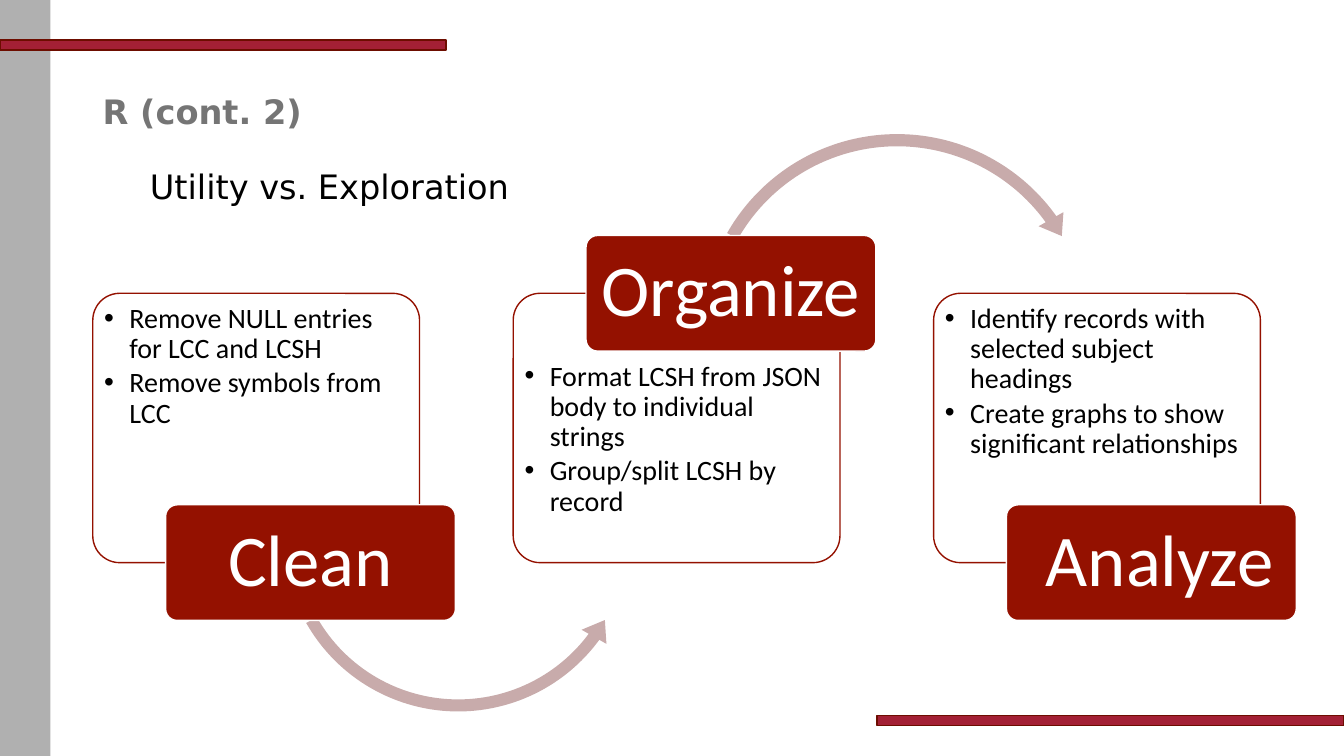
from lxml.etree import SubElement
from pptx import Presentation
from pptx.dml.color import RGBColor
from pptx.enum.shapes import MSO_SHAPE as Preset
from pptx.enum.text import MSO_ANCHOR as Anchor, PP_ALIGN as Align
from pptx.oxml.ns import qn
from pptx.util import Pt

TITLE = "R (cont. 2)"
SUBTITLE = "Utility vs. Exploration"

# Heading, heading at the top of the card, bullets
STEPS = [
    ("Clean", False, ["Remove NULL entries for LCC and LCSH",
                      "Remove symbols from LCC"]),
    ("Organize", True, ["Format LCSH from JSON body to individual strings",
                        "Group/split LCSH by record"]),
    (" Analyze", False, ["Identify records with selected subject headings",
                         "Create graphs to show significant relationships"]),
]

# Arrow leaving each step but the last: preset, left, top, size, adjustments
ARROWS = [
    (Preset.LEFT_CIRCULAR_ARROW, 196.6, 252.7, 261.4,
     (0.033, 4.078, 21.833, 90.245, 0.039)),
    (Preset.CIRCULAR_ARROW, 495.4, 90, 290.9,
     (0.03, 3.631, 194.614, 125.755, 0.035)),
]


class Theme:
    heading_font = "DejaVu Sans"
    body_font = "Calibri"
    title_size = 24
    bullet_size = 20
    tag_size = 52
    white = "FFFFFF"
    black = "000000"
    title = "757575"
    sidebar = "B0B0B0"
    bar = "A32035"
    bar_line = "6D0D00"
    step = "941100"
    arrow = "C8ABAB"


PAGE_W, PAGE_H = 960, 540
BAR_H = 7.2
CARD_LEFT, CARD_TOP, CARD_W, CARD_H = 66.3, 209.5, 233.4, 192.4
CARD_PITCH = 300.3
TAG_SHIFT, TAG_W, TAG_H = 52, 207, 82.6
CORNER = 0.1


def add_shape(page, preset, left, top, width, height, fill, line=None, adjust=()):
    shape = page.shapes.add_shape(preset, Pt(left), Pt(top), Pt(width), Pt(height))
    shape.shadow.inherit = False
    shape.fill.solid()
    shape.fill.fore_color.rgb = RGBColor.from_string(fill)
    if line:
        shape.line.color.rgb = RGBColor.from_string(line)
        shape.line.width = Pt(1)
    else:
        shape.line.fill.background()
    for index, value in enumerate(adjust):
        shape.adjustments[index] = value
    return shape


def set_frame(frame, anchor, sides, top, bottom):
    frame.word_wrap = True
    frame.vertical_anchor = anchor
    frame.margin_left = frame.margin_right = Pt(sides)
    frame.margin_top, frame.margin_bottom = Pt(top), Pt(bottom)


def style(para, font, size, color, align=Align.LEFT, bold=False, spacing=0.9):
    para.alignment = align
    para.line_spacing = spacing
    para.font.name = font
    para.font.size = Pt(size)
    para.font.bold = bold
    para.font.color.rgb = RGBColor.from_string(color)


def add_bullet(para, indent=18):
    properties = para._p.get_or_add_pPr()
    properties.set("marL", str(Pt(indent)))
    properties.set("indent", str(-Pt(indent)))
    SubElement(properties, qn("a:buFont")).set("typeface", "Arial")
    SubElement(properties, qn("a:buChar")).set("char", "•")


def add_heading(page, text, left, top, width, height, color, **options):
    box = page.shapes.add_textbox(Pt(left), Pt(top), Pt(width), Pt(height))
    set_frame(box.text_frame, Anchor.MIDDLE, 7.2, 3.6, 3.6)
    para = box.text_frame.paragraphs[0]
    para.text = text
    style(para, Theme.heading_font, Theme.title_size, color, **options)


def add_card(page, left, bullets, tag_on_top):
    card = add_shape(page, Preset.ROUNDED_RECTANGLE, left, CARD_TOP, CARD_W, CARD_H,
                     Theme.white, Theme.step, [CORNER])
    frame = card.text_frame
    set_frame(frame, Anchor.TOP, 2.5, 2 + (TAG_H / 2 if tag_on_top else 0), 2)
    for index, text in enumerate(bullets):
        para = frame.add_paragraph() if index else frame.paragraphs[0]
        para.text = text
        add_bullet(para)
        style(para, Theme.body_font, Theme.bullet_size, Theme.black)
        para.space_after = Pt(3)


def add_tag(page, card_left, text, on_top):
    """Add the step heading, centred on the top or bottom edge of its card."""
    edge = CARD_TOP if on_top else CARD_TOP + CARD_H
    tag = add_shape(page, Preset.ROUNDED_RECTANGLE, card_left + TAG_SHIFT,
                    edge - TAG_H / 2, TAG_W, TAG_H, Theme.step, Theme.white, [CORNER])
    set_frame(tag.text_frame, Anchor.MIDDLE, 7, 5, 5)
    para = tag.text_frame.paragraphs[0]
    para.text = text
    style(para, Theme.body_font, Theme.tag_size, Theme.white, Align.CENTER)


def main():
    deck = Presentation()
    deck.slide_width, deck.slide_height = Pt(PAGE_W), Pt(PAGE_H)
    page = deck.slides.add_slide(deck.slide_layouts[6])

    add_shape(page, Preset.RECTANGLE, 0, 0, 36, PAGE_H, Theme.sidebar)
    for left, top, width in [(0, 28.5, 318.5), (626.5, 511, PAGE_W - 626.5)]:
        add_shape(page, Preset.RECTANGLE, left, top, width, BAR_H,
                  Theme.bar, Theme.bar_line)
    add_heading(page, TITLE, 66.3, 28.8, 828, 104.4, Theme.title, bold=True)

    for index, (name, on_top, bullets) in enumerate(STEPS):
        left = CARD_LEFT + index * CARD_PITCH
        add_card(page, left, bullets, on_top)
        if index < len(ARROWS):
            preset, arrow_left, arrow_top, size, adjust = ARROWS[index]
            add_shape(page, preset, arrow_left, arrow_top, size, size,
                      Theme.arrow, adjust=adjust)
        add_tag(page, left, name, on_top)

    add_heading(page, SUBTITLE, 100, 115.2, 301.7, 36, Theme.black, spacing=1.0)
    deck.save("out.pptx")


if __name__ == "__main__":
    main()
